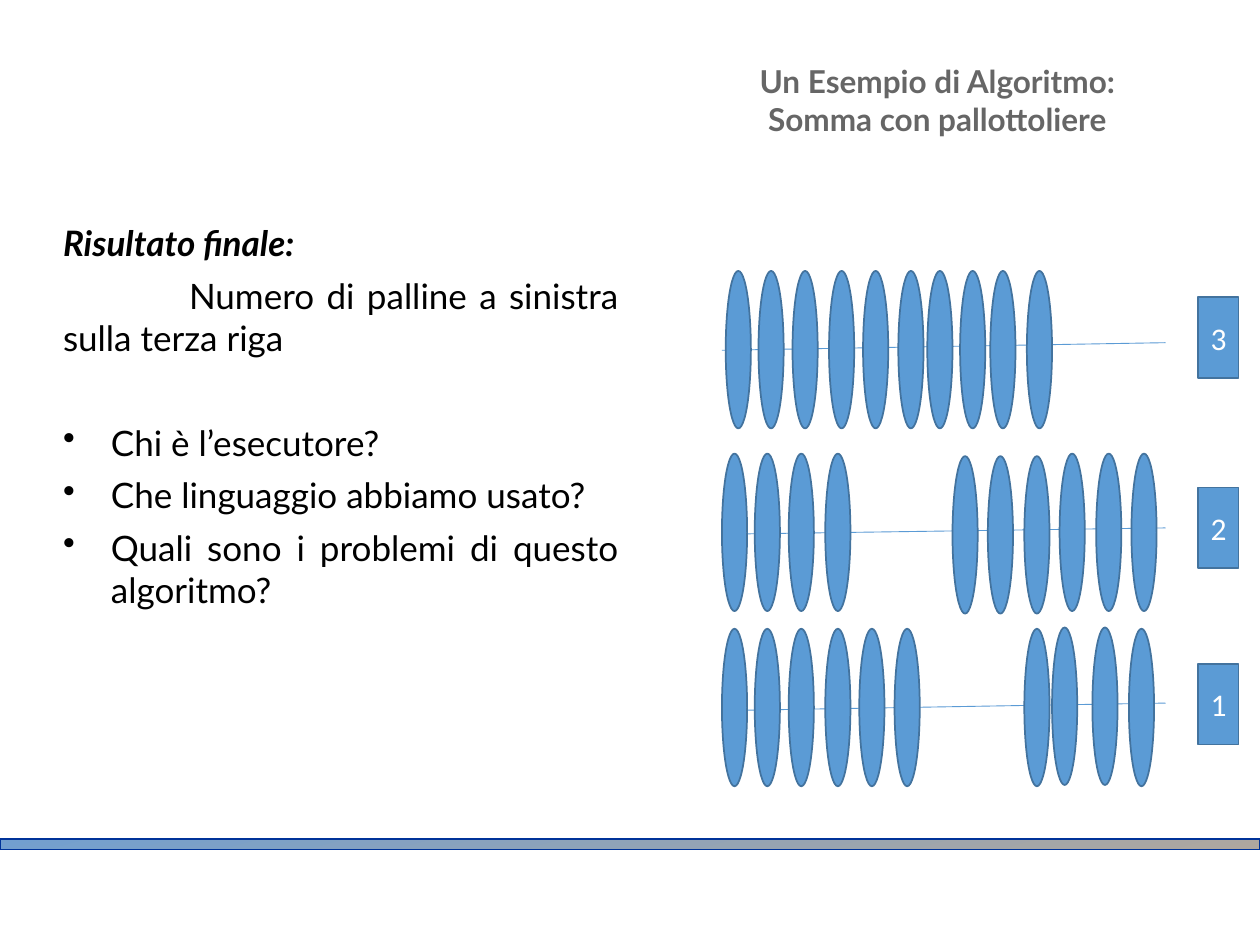
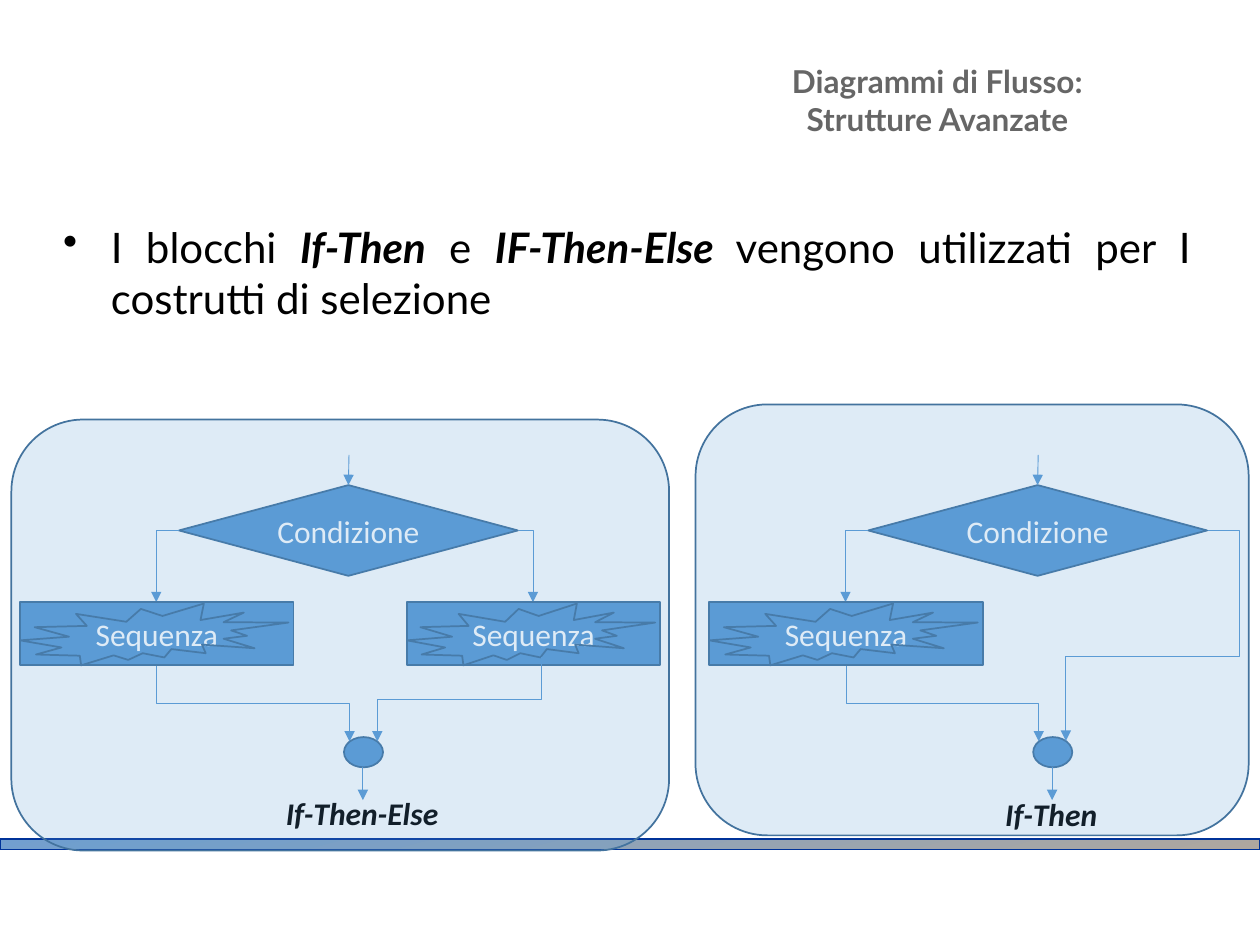
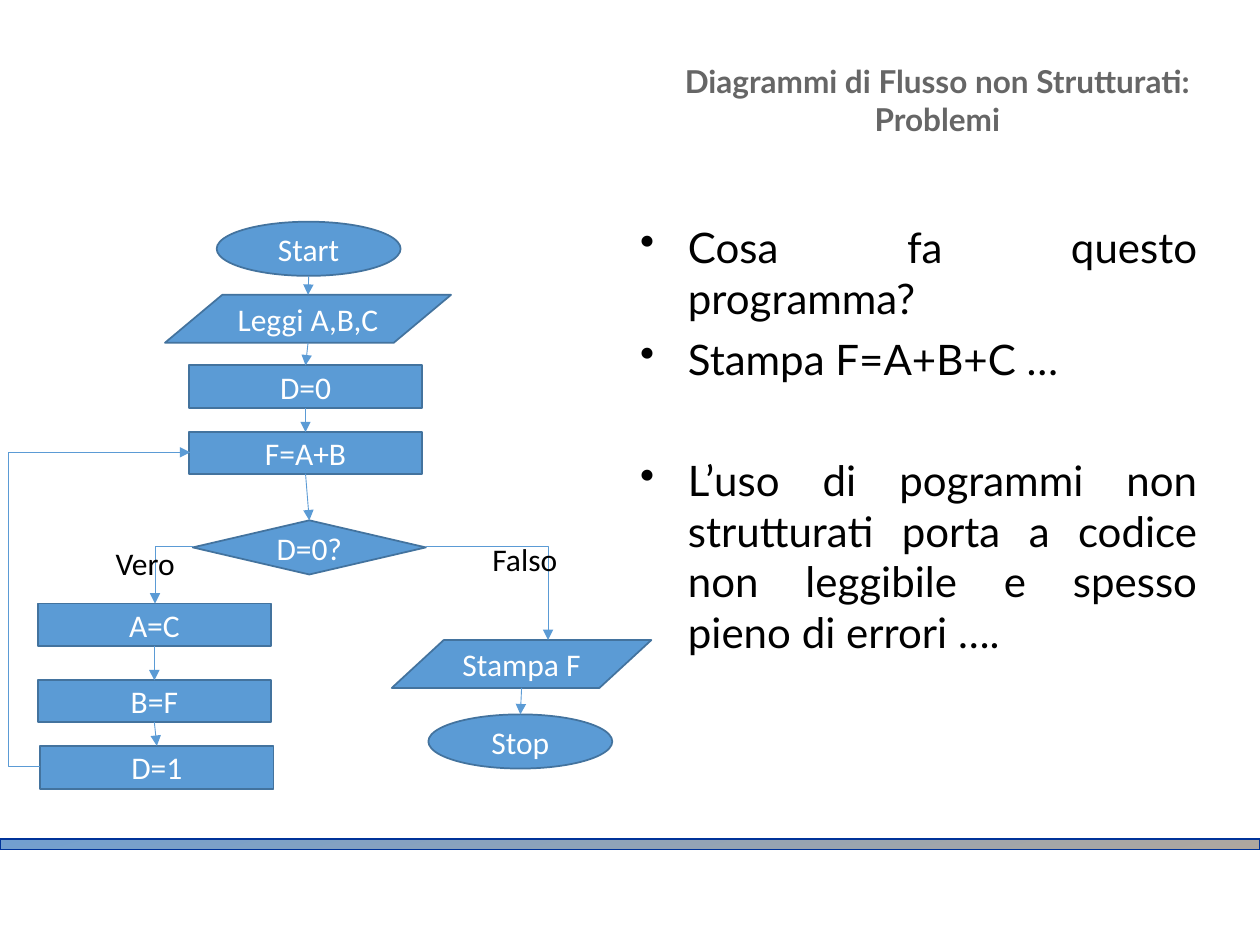
"""Build three slides on algorithms and flow charts."""
from lxml.etree import SubElement as Sub
from pptx import Presentation
from pptx.dml.color import RGBColor as RGB
from pptx.enum.shapes import MSO_CONNECTOR as Wire, MSO_SHAPE as Kind
from pptx.enum.text import MSO_ANCHOR as Anchor, PP_ALIGN as Align
from pptx.oxml.ns import qn
from pptx.util import Inches, Pt

BLUE, EDGE = RGB(0x5B, 0x9B, 0xD5), RGB(0x43, 0x73, 0x9E)
WHITE, BLACK, GRAY = RGB(255, 255, 255), RGB(0, 0, 0), RGB(0x66, 0x66, 0x66)
SKY, SAND, NAVY = RGB(0x72, 0x9F, 0xCF), RGB(0xAE, 0xA7, 0x9F), RGB(0, 0x33, 0x99)
HEAD, BODY = "Lato", "Calibri"
STRONG = {"bold": True, "italic": True}

TITLES = ["Un Esempio di Algoritmo:\vSomma con pallottoliere",
          "Diagrammi di Flusso:\vStrutture Avanzate",
          "Diagrammi di Flusso non Strutturati: Problemi"]

ABACUS = [("Risultato finale:", "bold", 0),
          ("Numero di palline a sinistra sulla terza riga", "first", 6),
          ("Chi è l’esecutore?", "dot", 36),
          ("Che linguaggio abbiamo usato?", "dot", 6),
          ("Quali sono i problemi di questo algoritmo?", "dot", 6)]
CHOICE = [(("I blocchi ", "*If-Then", " e ", "*IF-Then-Else ",
            "vengono utilizzati per I costrutti di selezione"), "dot", 0)]
ISSUES = [("Cosa fa questo programma?", "dot", 0),
          ("Stampa F=A+B+C …", "dot", 6),
          ("L’uso di pogrammi non strutturati porta a codice non leggibile "
           "e spesso pieno di errori ….", "dot", 40.8)]

RODS = [("3", 2.36, 2.78, 2.72,
         [(2.15, (5.76, 6.02, 6.29, 6.58, 6.85, 7.13, 7.36, 7.62, 7.86, 8.15))]),
        ("2", 3.87, 4.24, 4.19,
         [(3.6, (5.73, 5.99, 6.26, 6.55, 8.41, 8.7, 8.98)),
          (3.62, (7.56, 7.84, 8.13))]),
        ("1", 5.27, 5.64, 5.58,
         [(4.99, (5.73, 5.99, 6.26, 6.55, 6.82, 7.1, 8.13, 8.96)),
          (4.98, (8.35, 8.67))])]

STEPS = {"Start": (Kind.OVAL, 1.72, 1.76, 1.46, 0.43),
         "Leggi A,B,C": (Kind.FLOWCHART_DATA, 1.31, 2.34, 2.27, 0.38),
         "D=0": (Kind.RECTANGLE, 1.5, 2.9, 1.85, 0.34),
         "F=A+B": (Kind.RECTANGLE, 1.5, 3.43, 1.85, 0.33),
         "D=0?": (Kind.DIAMOND, 1.53, 4.13, 1.85, 0.43),
         "A=C": (Kind.RECTANGLE, 0.3, 4.79, 1.85, 0.34),
         "B=F": (Kind.RECTANGLE, 0.3, 5.4, 1.85, 0.33),
         "D=1": (Kind.RECTANGLE, 0.32, 5.92, 1.85, 0.34),
         "Stampa F": (Kind.FLOWCHART_DATA, 3.11, 5.08, 2.06, 0.38),
         "Stop": (Kind.OVAL, 3.4, 5.67, 1.46, 0.43)}
CHAINS = [("Start", "Leggi A,B,C", "D=0", "F=A+B", "D=0?"),
          ("A=C", "B=F", "D=1"), ("Stampa F", "Stop")]


def style(runs, size, color, name, **marks):
    for run in runs:
        font = run.font
        font.size, font.name, font.color.rgb = Pt(size), name, color
        for key, val in marks.items():
            setattr(font, key, val)


def shape(slide, kind, box, text="", fill=BLUE):
    item = slide.shapes.add_shape(kind, *map(Inches, box))
    item.shadow.inherit = False
    if fill is None:
        item.fill.background()
    else:
        item.fill.solid()
        item.fill.fore_color.rgb = fill
    item.line.color.rgb, item.line.width = EDGE, Pt(1)
    if text:
        frame = item.text_frame
        frame.text, frame.vertical_anchor = text, Anchor.MIDDLE
        para = frame.paragraphs[0]
        para.alignment = Align.CENTER
        style(para.runs, 18, WHITE, BODY)
    return item


def wire(slide, ends, kind=Wire.STRAIGHT, arrow=True):
    line = slide.shapes.add_connector(kind, *map(Inches, ends))
    line.line.color.rgb, line.line.width = BLUE, Pt(0.5)
    props = line.element.spPr
    if arrow:
        Sub(props.find(qn("a:ln")), qn("a:tailEnd"), type="triangle")
    Sub(props, qn("a:effectLst"))
    return line


def bend(slide, box, turn=0, flip="", adj=(), size=2):
    left, top, wide, high = box
    line = wire(slide, (left, top, left + wide, top + high), Wire.ELBOW)
    props = line.element.spPr
    frame, geom = props.find(qn("a:xfrm")), props.find(qn("a:prstGeom"))
    frame.set("rot", str(turn * 60000))
    if flip:
        frame.set(flip, "1")
    geom.set("prst", f"bentConnector{size}")
    guides = geom.find(qn("a:avLst"))
    for num, val in enumerate(adj, 1):
        name = f"adj{num}"
        Sub(guides, qn("a:gd"), name=name, fmla=f"val {round(val * 100000)}")


def label(slide, box, text, wrap=False, **marks):
    frame = slide.shapes.add_textbox(*map(Inches, box)).text_frame
    frame.text, frame.word_wrap = text, wrap
    style(frame.paragraphs[0].runs, 18, BLACK, BODY, **marks)


def body(slide, box, items, size):
    frame = slide.shapes.add_textbox(*map(Inches, box)).text_frame
    frame.word_wrap = True
    frame.margin_left = frame.margin_top = frame.margin_right = frame.margin_bottom = 0
    for num, (text, mode, gap) in enumerate(items):
        para = frame.add_paragraph() if num else frame.paragraphs[0]
        props = para._p.get_or_add_pPr()
        if mode == "dot":
            props.set("marL", str(Inches(0.38)))
            props.set("indent", str(Inches(-0.38)))
            Sub(props, qn("a:buChar"), char="•")
        elif mode == "first":
            props.set("indent", str(Inches(1)))
        para.alignment, para.space_before = Align.JUSTIFY, Pt(gap)
        for part in (text,) if isinstance(text, str) else text:
            run = para.add_run()
            run.text = part.lstrip("*")
            marks = STRONG if mode == "bold" or part[0] == "*" else {}
            style([run], size, BLACK, HEAD, **marks)


def base(deck, title):
    slide = deck.slides.add_slide(deck.slide_layouts[6])
    band = shape(slide, Kind.RECTANGLE, (0, 6.66, 10, 0.08))
    band.fill.gradient()
    band.fill.gradient_angle = 285
    for stop, color in zip(band.fill.gradient_stops, (SKY, SAND)):
        stop.color.rgb = color
    band.line.color.rgb, band.line.width = NAVY, Pt(0.75)
    box = slide.shapes.add_textbox(*map(Inches, (5.16, 0.23, 4.56, 1.13)))
    frame = box.text_frame
    frame.text, frame.word_wrap = title, True
    frame.vertical_anchor = Anchor.MIDDLE
    para = frame.paragraphs[0]
    para.alignment = Align.CENTER
    style(para.runs, 18, GRAY, HEAD, bold=True)
    return slide


def abacus(slide):
    body(slide, (0.5, 1.76, 4.41, 4.35), ABACUS, 20)
    for num, top, start, end, beads in RODS:
        wire(slide, (5.73, start, 9.25, end), arrow=False)
        for y, places in beads:
            for x in places:
                shape(slide, Kind.OVAL, (x, y, 0.2, 1.25))
        shape(slide, Kind.RECTANGLE, (9.51, top, 0.32, 0.64), num)


def block(slide, x, wide):
    shape(slide, Kind.RECTANGLE, (x, 4.78, wide, 0.5), "Sequenza")
    shape(slide, Kind.EXPLOSION2, (x, 4.79, wide - 0.04, 0.49), fill=None)


def branch(slide, x):
    test = shape(slide, Kind.DIAMOND, (x + 1.42, 3.85, 2.69, 0.72), "Condizione")
    wire(slide, (x + 2.77, 3.61, x + 2.77, 3.85)).end_connect(test, 0)
    bend(slide, (x + 1.24, 4.21, 0.18, 0.57), 180, "flipV")
    block(slide, x + 0.16, 2.17)
    shape(slide, Kind.OVAL, (x + 2.73, 5.85, 0.31, 0.24))
    bend(slide, (x + 1.71, 4.82, 0.6, 1.53), 270, "flipH", (0.5,), 3)
    wire(slide, (x + 2.88, 6.09, x + 2.88, 6.35))


def choice(slide):
    body(slide, (0.5, 1.76, 8.95, 1.25), CHOICE, 24)
    for x in (0, 5.47):
        branch(slide, x)
    bend(slide, (4.12, 4.21, 0.11, 0.57))
    block(slide, 3.23, 2.01)
    bend(slide, (3.31, 4.9, 0.67, 1.3), 90, "", (0.5,), 3)
    bend(slide, (8.46, 4.21, 1.13, 1.67), 0, "flipH", (-0.222, 0.598), 4)
    label(slide, (2.17, 6.25, 1.43, 0.4), "If-Then-Else", **STRONG)
    label(slide, (7.88, 6.26, 0.94, 0.4), "If-Then", **STRONG)
    for box in ((0.09, 3.33, 5.22, 3.42), (5.52, 3.21, 4.39, 3.42)):
        panel = shape(slide, Kind.ROUNDED_RECTANGLE, box)
        color = panel.element.spPr.find(qn("a:solidFill"))[0]
        Sub(color, qn("a:alpha"), val="20000")


def link(slide, nodes, start, end):
    (kind, x, y, wide, high), (goal, left, top, span, _) = STEPS[start], STEPS[end]
    line = wire(slide, (x + wide / 2, y + high, left + span / 2, top))
    sided = (Kind.RECTANGLE, Kind.DIAMOND)
    if kind in sided:
        line.begin_connect(nodes[start], 2)
    if goal in sided:
        line.end_connect(nodes[end], 0)


def issues(slide):
    body(slide, (5.08, 1.76, 4.42, 4.35), ISSUES, 24)
    nodes = {text: shape(slide, kind, box, text)
             for text, (kind, *box) in STEPS.items()}
    for chain in CHAINS:
        for start, end in zip(chain, chain[1:]):
            link(slide, nodes, start, end)
    bend(slide, (1.23, 4.34, 0.3, 0.45), 180, "flipV")
    bend(slide, (3.38, 4.34, 0.97, 0.74))
    bend(slide, (0.32, 3.59, 1.19, 2.49), 180, "flipH", (-0.211,), 3)
    label(slide, (0.82, 4.27, 0.73, 0.4), "Vero", True)
    label(slide, (3.81, 4.24, 0.73, 0.4), "Falso", True)


def main():
    deck = Presentation()
    deck.slide_width, deck.slide_height = Inches(10), Inches(7.5)
    for title, draw in zip(TITLES, (abacus, choice, issues)):
        draw(base(deck, title))
    deck.save("out.pptx")


if __name__ == "__main__":
    main()
